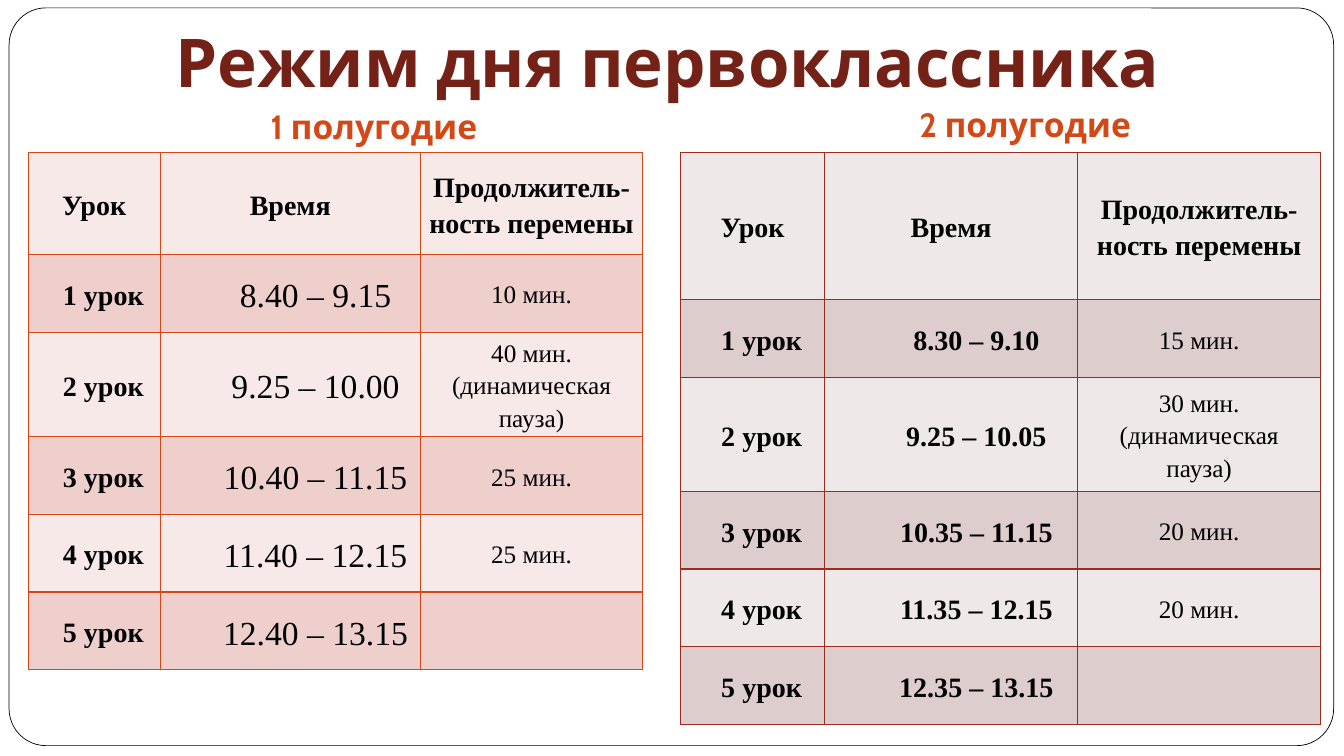
from lxml import etree
from pptx import Presentation
from pptx import util as u
from pptx.dml.color import RGBColor
from pptx.enum import shapes, text
from pptx.oxml import ns

WHITE = RGBColor(0xFF, 0xFF, 0xFF)
BLACK = RGBColor(0x00, 0x00, 0x00)
MAROON = RGBColor(0x74, 0x22, 0x17)
ORANGE = RGBColor(0xD3, 0x48, 0x17)
BRICK = RGBColor(0x9B, 0x2D, 0x1F)
PINK_BANDS = (RGBColor(0xF7, 0xE9, 0xE8), RGBColor(0xEF, 0xCF, 0xCC))
GREY_BANDS = (RGBColor(0xEF, 0xE8, 0xE8), RGBColor(0xDE, 0xCD, 0xCD))

HEADING_FONT = "Cabin"
TABLE_FONT = "Times New Roman"
HEADERS = ("Урок", "Время", "Продолжитель-ность перемены")
LESSON_INDENT = 0.46
TIME_INDENT = 1.27

FIRST_TERM = (
    ("8.40 – 9.15", "10 мин."),
    ("9.25 – 10.00", "40 мин. (динамическая пауза)"),
    ("10.40 – 11.15", "25 мин."),
    ("11.40 – 12.15", "25 мин."),
    ("12.40 – 13.15", ""),
)
SECOND_TERM = (
    ("8.30 – 9.10", "15 мин."),
    ("9.25 – 10.05", "30 мин. (динамическая пауза)"),
    ("10.35 – 11.15", "20 мин."),
    ("11.35 – 12.15", "20 мин."),
    ("12.35 – 13.15", ""),
)


def add_span(para, wording, font, size, color, bold=True):
    span = para.add_run()
    span.text = wording
    span.font.name = font
    span.font.size = u.Pt(size)
    span.font.color.rgb = color
    span.font.bold = bold


def add_frame(page):
    frame = page.shapes.add_shape(
        shapes.MSO_SHAPE.ROUNDED_RECTANGLE,
        u.Cm(0.23), u.Cm(0.2), u.Cm(33.38), u.Cm(18.59))
    frame.adjustments[0] = 0.05
    frame.shadow.inherit = False
    frame.fill.solid()
    frame.fill.fore_color.rgb = WHITE
    frame.line.color.rgb = BLACK
    frame.line.width = u.Pt(0.5)
    page.shapes._spTree.insert(2, frame._element)


def set_title(page, wording):
    title = page.shapes.title
    title.left, title.top = u.Cm(4.17), u.Cm(-0.3)
    title.width, title.height = u.Cm(27.84), u.Cm(3.1)
    box = title.text_frame
    box.word_wrap = True
    box.auto_size = text.MSO_AUTO_SIZE.NONE
    box.vertical_anchor = text.MSO_ANCHOR.BOTTOM
    box.margin_bottom = u.Cm(0.25)
    para = box.paragraphs[0]
    para.alignment = text.PP_ALIGN.LEFT
    add_span(para, wording, HEADING_FONT, 48, MAROON)


def add_heading(page, wording, left, top):
    box = page.shapes.add_textbox(
        u.Cm(left), u.Cm(top), u.Cm(12.85), u.Cm(1.6)).text_frame
    box.word_wrap = True
    box.vertical_anchor = text.MSO_ANCHOR.BOTTOM
    para = box.paragraphs[0]
    para.alignment = text.PP_ALIGN.CENTER
    add_span(para, wording, HEADING_FONT, 24, ORANGE)


def set_borders(cell, color):
    props = cell._tc.get_or_add_tcPr()
    for position, side in enumerate(("lnL", "lnR", "lnT", "lnB")):
        line = etree.Element(ns.qn("a:" + side), w=str(u.Pt(1)))
        fill = etree.SubElement(line, ns.qn("a:solidFill"))
        etree.SubElement(fill, ns.qn("a:srgbClr"), val=str(color))
        props.insert(position, line)


def fill_cell(cell, wording, size, bold, indent, band, border):
    cell.fill.solid()
    cell.fill.fore_color.rgb = band
    set_borders(cell, border)
    cell.vertical_anchor = text.MSO_ANCHOR.MIDDLE
    cell.margin_left = cell.margin_right = u.Cm(0.18)
    cell.margin_top = cell.margin_bottom = 0
    if not wording:
        return
    para = cell.text_frame.paragraphs[0]
    para.alignment = text.PP_ALIGN.CENTER
    para.line_spacing = 1.15
    if indent:
        para._p.get_or_add_pPr().set("indent", str(u.Cm(indent)))
    add_span(para, wording, TABLE_FONT, size, BLACK, bold)


def add_schedule(page, left, widths, heights, lessons, time_style, bands, border):
    table = page.shapes.add_table(
        len(heights), len(widths), u.Cm(left), u.Cm(3.84),
        u.Cm(sum(widths)), u.Cm(sum(heights))).table
    table.first_row = table.horz_banding = False
    for column, width in zip(table.columns, widths):
        column.width = u.Cm(width)
    for row, height in zip(table.rows, heights):
        row.height = u.Cm(height)
    for column, wording in enumerate(HEADERS):
        fill_cell(table.cell(0, column), wording, 20, True, 0, bands[0], border)
    time_size, time_bold = time_style
    for number, (time, pause) in enumerate(lessons, start=1):
        entries = (
            (f"{number} урок", 20, True, LESSON_INDENT),
            (time, time_size, time_bold, TIME_INDENT),
            (pause, 18, False, 0),
        )
        for column, entry in enumerate(entries):
            fill_cell(table.cell(number, column), *entry, bands[number % 2], border)


def main():
    deck = Presentation()
    deck.slide_width, deck.slide_height = u.Cm(33.87), u.Cm(19.05)
    page = deck.slides.add_slide(deck.slide_layouts.get_by_name("Title Only"))
    add_frame(page)
    set_title(page, "Режим дня первоклассника")
    add_heading(page, "1 полугодие", 3, 2.21)
    add_heading(page, "2 полугодие", 19.41, 2.16)
    add_schedule(page, 0.71, (3.33, 6.55, 5.61), (2.57,) + (1.96,) * 5,
                 FIRST_TERM, (24, False), PINK_BANDS, ORANGE)
    add_schedule(page, 17.15, (3.63, 6.38, 6.12),
                 (3.71, 1.96, 2.87, 1.96, 1.96, 1.96),
                 SECOND_TERM, (20, True), GREY_BANDS, BRICK)
    deck.save("out.pptx")


if __name__ == "__main__":
    main()
